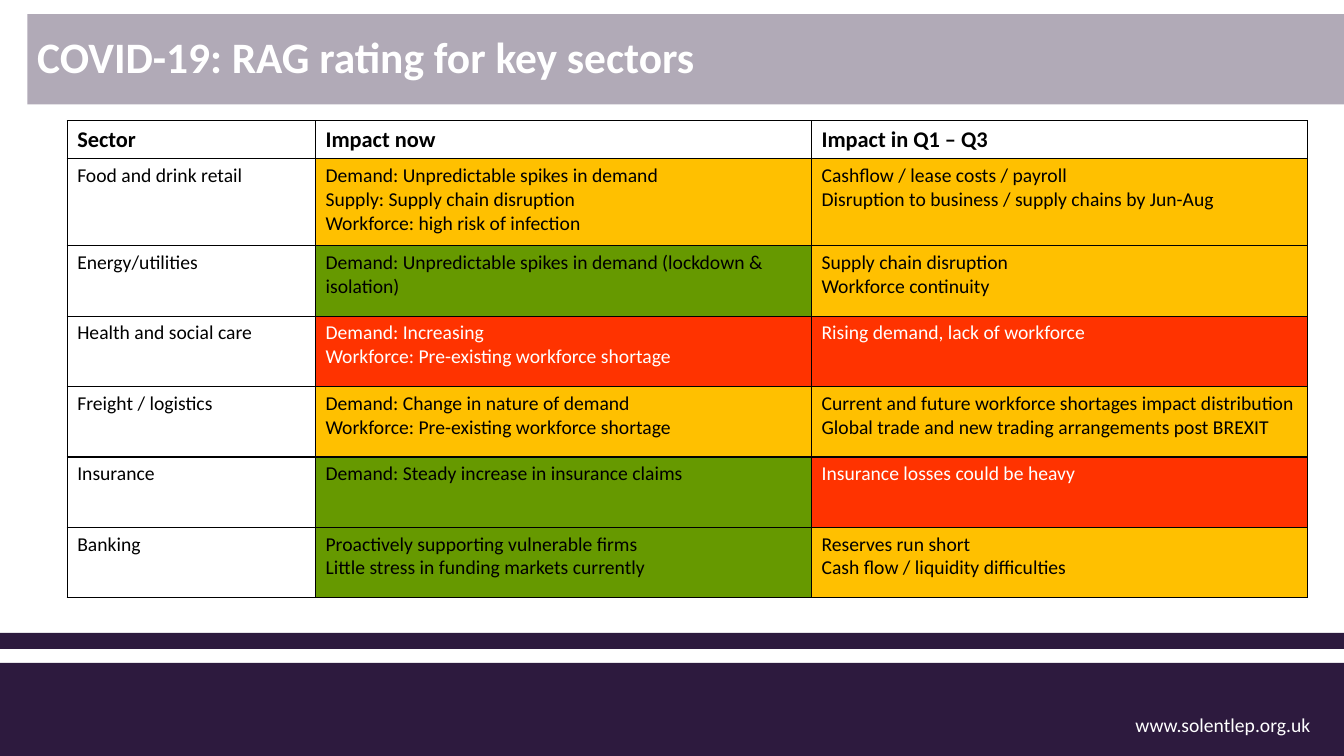
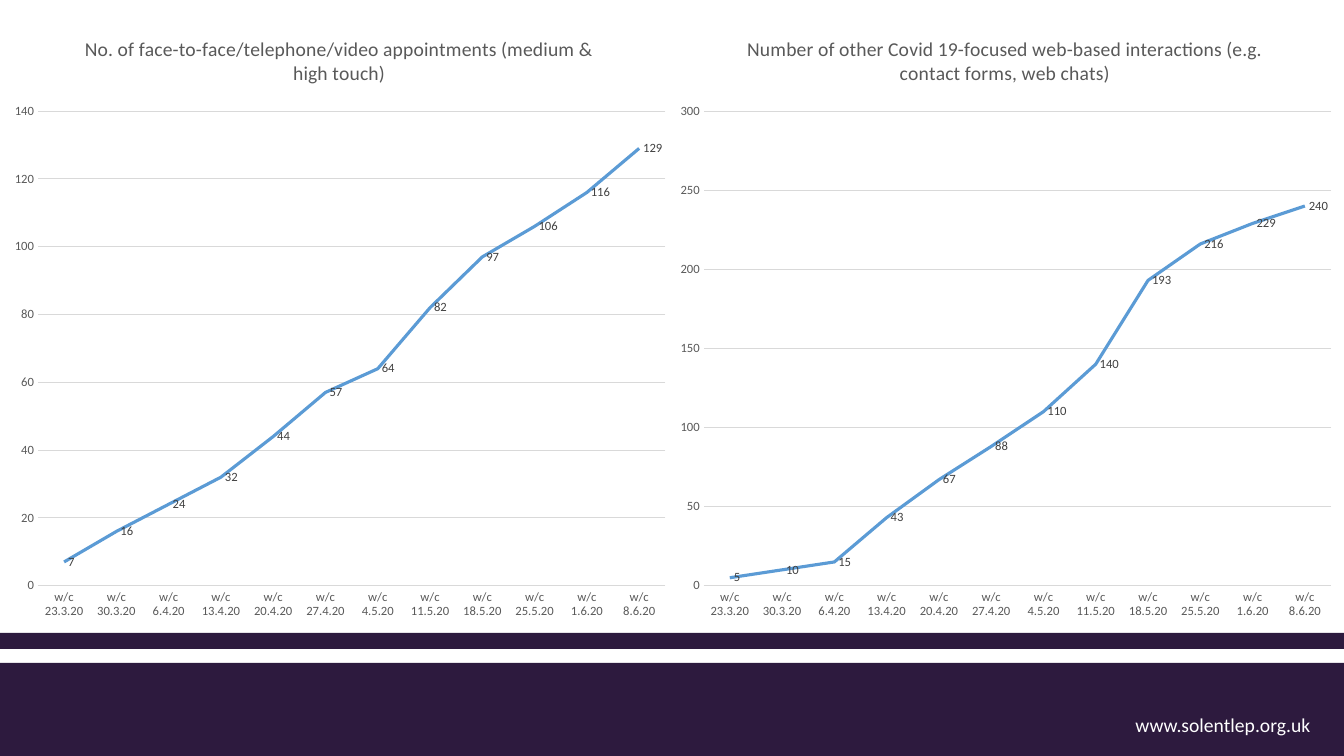
from dataclasses import dataclass

from lxml import etree
from pptx import Presentation
from pptx.chart.data import CategoryChartData
from pptx.dml.color import RGBColor
from pptx.enum.chart import XL_CHART_TYPE, XL_LABEL_POSITION, XL_MARKER_STYLE, XL_TICK_MARK
from pptx.enum.shapes import MSO_SHAPE
from pptx.enum.text import MSO_ANCHOR, PP_ALIGN
from pptx.oxml import parse_xml
from pptx.oxml.ns import nsdecls, qn
from pptx.util import Pt

RECT = MSO_SHAPE.RECTANGLE
LEFT, MIDDLE = PP_ALIGN.LEFT, MSO_ANCHOR.MIDDLE
LINE, NO_MARKER = XL_CHART_TYPE.LINE, XL_MARKER_STYLE.NONE
NO_TICK, LABEL_RIGHT = XL_TICK_MARK.NONE, XL_LABEL_POSITION.RIGHT


@dataclass(frozen=True)
class Theme:
    font: str = "Calibri"
    purple: str = "2D1A3E"
    white: str = "FFFFFF"
    black: str = "000000"
    amber: str = "FFC000"
    green: str = "669900"
    red: str = "FF3300"
    line_blue: str = "5B9BD5"
    grid: str = "D9D9D9"
    axis_text: str = "595959"
    label_text: str = "404040"
    title_size: float = 31
    head_size: float = 16
    body_size: float = 14
    chart_size: float = 10
    axis_size: float = 9


@dataclass(frozen=True)
class Box:
    x: float
    y: float
    w: float
    h: float

    def lengths(self) -> tuple:
        return Pt(self.x), Pt(self.y), Pt(self.w), Pt(self.h)


@dataclass(frozen=True)
class Rating:
    text: str
    fill: str


@dataclass(frozen=True)
class Sector:
    name: str
    now: Rating
    later: Rating


@dataclass(frozen=True)
class Trend:
    title: str
    box: Box
    values: tuple
    top: int
    step: int


T = Theme()
SLIDE_W, SLIDE_H = 960, 540

# Shared frame
BANDS = (Box(0, 473.5, SLIDE_W, 66.5), Box(0, 452, SLIDE_W, 11.5))
FOOTER = Box(804, 506, 142, 29)
TITLE = Box(19.5, 10, 940.5, 64.5)

# Sector table
TABLE = Box(48, 86.2, 886, 341)
COL_WIDTHS = (177.4, 354.3, 354.3)
ROW_HEIGHTS = (27.2, 62.2) + (50.3,) * 5
HEADINGS = ("Sector", "Impact now", "Impact in Q1 – Q3")
SECTORS = (
    Sector("Food and drink retail",
           Rating("Demand: Unpredictable spikes in demand\nSupply: Supply chain disruption\n"
                  "Workforce: high risk of infection", T.amber),
           Rating("Cashflow / lease costs / payroll\n"
                  "Disruption to business / supply chains by Jun-Aug", T.amber)),
    Sector("Energy/utilities",
           Rating("Demand: Unpredictable spikes in demand (lockdown & isolation)", T.green),
           Rating("Supply chain disruption\nWorkforce continuity", T.amber)),
    Sector("Health and social care",
           Rating("Demand: Increasing\nWorkforce: Pre-existing workforce shortage", T.red),
           Rating("Rising demand, lack of workforce", T.red)),
    Sector("Freight / logistics",
           Rating("Demand: Change in nature of demand\n"
                  "Workforce: Pre-existing workforce shortage", T.amber),
           Rating("Current and future workforce shortages impact distribution\n"
                  "Global trade and new trading arrangements post BREXIT", T.amber)),
    Sector("Insurance",
           Rating("Demand: Steady increase in insurance claims", T.green),
           Rating("Insurance losses could be heavy", T.red)),
    Sector("Banking",
           Rating("Proactively supporting vulnerable firms\n"
                  "Little stress in funding markets currently", T.green),
           Rating("Reserves run short\nCash flow / liquidity difficulties", T.amber)),
)

# Weekly trends
WEEKS = tuple(f"w/c {day}.20" for day in (
    "23.3", "30.3", "6.4", "13.4", "20.4", "27.4",
    "4.5", "11.5", "18.5", "25.5", "1.6", "8.6"))
CHART_W = 484.5
TRENDS = (
    Trend("No. of face-to-face/telephone/video appointments (medium & high touch)",
          Box(0, 10, CHART_W, 442),
          (7, 16, 24, 32, 44, 57, 64, 82, 97, 106, 116, 129), 140, 20),
    Trend("Number of other Covid 19-focused web-based interactions (e.g. contact forms, web chats)",
          Box(SLIDE_W - CHART_W, 10, CHART_W, 442),
          (5, 10, 15, 43, 67, 88, 110, 140, 193, 216, 229, 240), 300, 50),
)
PLOT_AREA = {"x": 0.056, "y": 0.157, "w": 0.925, "h": 0.767}


def rgb(color: str) -> RGBColor:
    return RGBColor.from_string(color)


def style_font(font, size: float, color: str, bold: bool = False) -> None:
    font.name, font.size, font.bold = T.font, Pt(size), bold
    font.color.rgb = rgb(color)


def set_text(tf, text: str, size: float, color: str, bold: bool = False) -> None:
    tf.text = text
    for p in tf.paragraphs:
        p.alignment = LEFT
        for r in p.runs:
            style_font(r.font, size, color, bold)


def add_band(s, box: Box):
    sp = s.shapes.add_shape(RECT, *box.lengths())
    sp.shadow.inherit = False
    sp.fill.solid()
    sp.fill.fore_color.rgb = rgb(T.purple)
    sp.line.fill.background()
    return sp


def add_slide(prs):
    s = prs.slides.add_slide(prs.slide_layouts[6])
    for box in BANDS:
        add_band(s, box)
    tf = s.shapes.add_textbox(*FOOTER.lengths()).text_frame
    tf.word_wrap = False
    set_text(tf, "www.solentlep.org.uk", T.body_size, T.white)
    return s


def add_title(s, text: str) -> None:
    sp = add_band(s, TITLE)
    color = sp.fill._xPr.find(qn("a:solidFill")).find(qn("a:srgbClr"))
    etree.SubElement(color, qn("a:alpha"), val="37000")
    tf = sp.text_frame
    tf.word_wrap, tf.vertical_anchor = True, MIDDLE
    set_text(tf, text, T.title_size, T.white, True)
    tf.paragraphs[0].line_spacing = 0.9


def add_borders(cell) -> None:
    tc_pr = cell._tc.get_or_add_tcPr()
    for side in ("lnL", "lnR", "lnT", "lnB"):
        tc_pr.append(parse_xml(
            f'<a:{side} {nsdecls("a")} w="{Pt(1)}"><a:solidFill>'
            f'<a:srgbClr val="{T.black}"/></a:solidFill></a:{side}>'))


def fill_cell(cell, text: str, fill: str = "", heading: bool = False) -> None:
    add_borders(cell)
    if fill:
        cell.fill.solid()
        cell.fill.fore_color.rgb = rgb(fill)
    else:
        cell.fill.background()
    set_text(cell.text_frame, text, T.head_size if heading else T.body_size,
             T.white if fill == T.red else T.black, heading)


def add_sector_table(s) -> None:
    table = s.shapes.add_table(len(ROW_HEIGHTS), len(COL_WIDTHS), *TABLE.lengths()).table
    table.first_row = table.horz_banding = False
    for col, width in zip(table.columns, COL_WIDTHS):
        col.width = Pt(width)
    for row, height in zip(table.rows, ROW_HEIGHTS):
        row.height = Pt(height)
    for i, heading in enumerate(HEADINGS):
        fill_cell(table.cell(0, i), heading, heading=True)
    for i, sector in enumerate(SECTORS, 1):
        fill_cell(table.cell(i, 0), sector.name)
        for j, rating in enumerate((sector.now, sector.later), 1):
            fill_cell(table.cell(i, j), rating.text, rating.fill)


def set_plot_area(chart) -> None:
    plot_area = chart._chartSpace.chart.plotArea
    for old in plot_area.findall(qn("c:layout")):
        plot_area.remove(old)
    layout = etree.Element(qn("c:layout"))
    manual = etree.SubElement(layout, qn("c:manualLayout"))
    etree.SubElement(manual, qn("c:layoutTarget"), val="inner")
    for key in ("x", "y"):
        etree.SubElement(manual, qn(f"c:{key}Mode"), val="edge")
    for key, share in PLOT_AREA.items():
        etree.SubElement(manual, qn(f"c:{key}"), val=str(share))
    plot_area.insert(0, layout)


def add_trend_chart(s, trend: Trend) -> None:
    data = CategoryChartData(number_format="#,##0")
    data.categories = WEEKS
    data.add_series("Series 1", trend.values)
    chart = s.shapes.add_chart(LINE, *trend.box.lengths(), data).chart
    style_font(chart.font, T.chart_size, T.black)
    chart.has_legend = False
    chart.has_title = True
    tf = chart.chart_title.text_frame
    tf.text = trend.title
    style_font(tf.paragraphs[0].runs[0].font, T.body_size, T.axis_text)
    chart.chart_title.include_in_layout = False
    set_plot_area(chart)

    # Axes
    cat, val = chart.category_axis, chart.value_axis
    for axis in (cat, val):
        axis.major_tick_mark = axis.minor_tick_mark = NO_TICK
        style_font(axis.tick_labels.font, T.axis_size, T.axis_text)
    val.minimum_scale, val.maximum_scale, val.major_unit = 0, trend.top, trend.step
    val.has_major_gridlines = True
    val.format.line.fill.background()
    for line in (cat.format.line, val.major_gridlines.format.line):
        line.color.rgb = rgb(T.grid)
        line.width = Pt(0.75)

    # Line and value labels
    plot = chart.plots[0]
    plot.vary_by_categories = False
    series = plot.series[0]
    series.smooth = False
    series.marker.style = NO_MARKER
    series.format.line.color.rgb = rgb(T.line_blue)
    series.format.line.width = Pt(2.25)
    labels = series.data_labels
    labels.show_value = True
    labels.position = LABEL_RIGHT
    labels.number_format, labels.number_format_is_linked = "#,##0", False
    style_font(labels.font, T.axis_size, T.label_text)


def main() -> None:
    prs = Presentation()
    prs.slide_width, prs.slide_height = Pt(SLIDE_W), Pt(SLIDE_H)

    # Sector ratings
    s = add_slide(prs)
    add_title(s, "COVID-19: RAG rating for key sectors")
    add_sector_table(s)

    # Interaction trends
    s = add_slide(prs)
    for trend in TRENDS:
        add_trend_chart(s, trend)

    prs.save("out.pptx")


if __name__ == "__main__":
    main()
